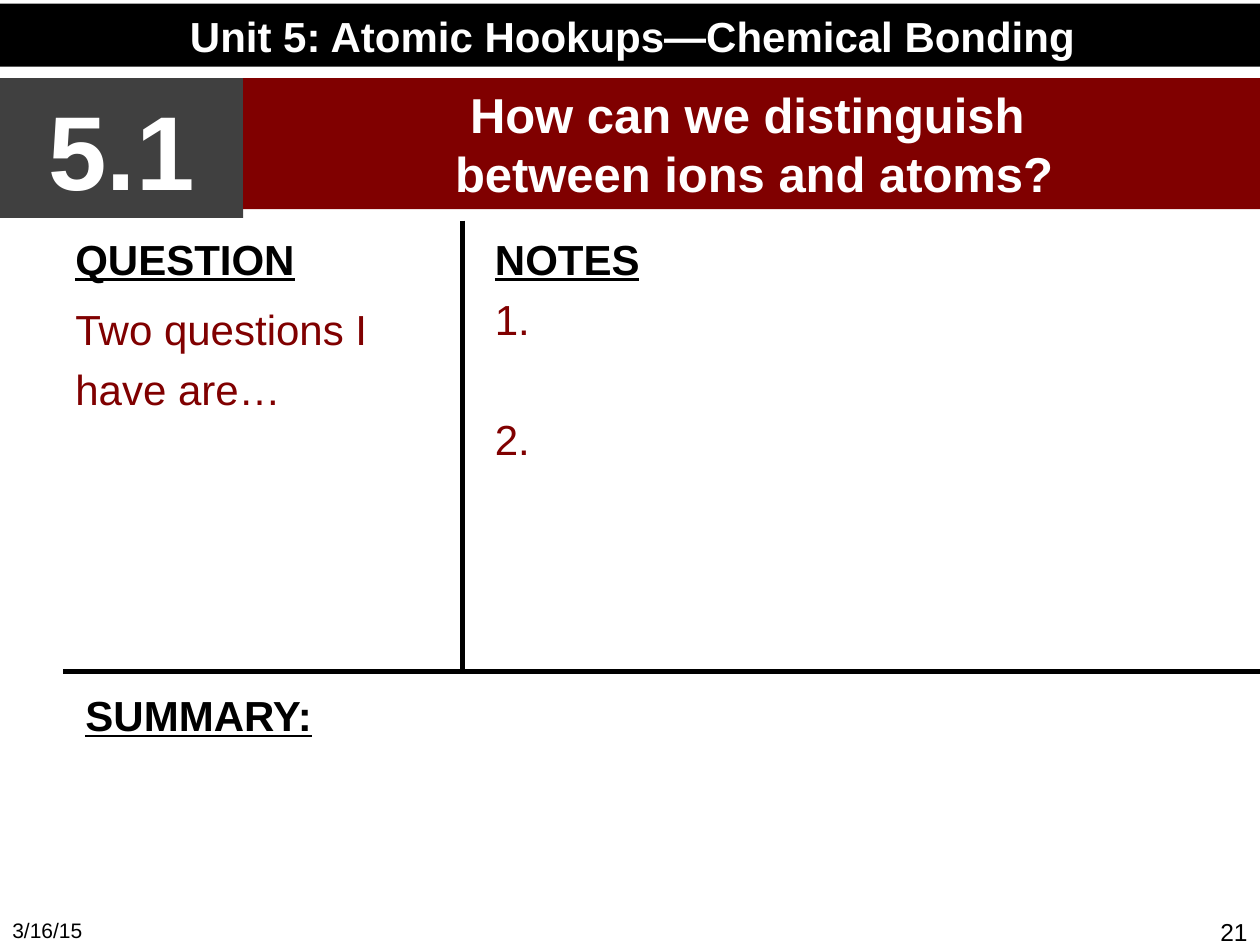
from dataclasses import dataclass

from lxml.etree import SubElement
from pptx import Presentation
from pptx.dml.color import RGBColor as RGB
from pptx.enum.shapes import MSO_CONNECTOR as CONN, MSO_SHAPE as SHAPE
from pptx.enum.text import MSO_ANCHOR as ANCHOR, PP_ALIGN as ALIGN
from pptx.oxml.ns import qn
from pptx.util import Inches, Pt


@dataclass(frozen=True)
class Theme:
    font: str = "Arial"
    black: RGB = RGB(0, 0, 0)
    white: RGB = RGB(255, 255, 255)
    gray: RGB = RGB(0x40, 0x40, 0x40)
    maroon: RGB = RGB(0x80, 0, 0)
    number: int = 60
    title: int = 28
    body: int = 24
    page: int = 14
    date: int = 12
    gap: float = 5.5
    rule: int = 3


T = Theme()


def style(p, size, color, bold=False, align=ALIGN.LEFT):
    p.alignment = align
    f = p.font
    f.name, f.size, f.bold = T.font, Pt(size), bold
    f.color.rgb = color


def add_banner(s, box, lines, fill, size):
    sp = s.shapes.add_shape(SHAPE.RECTANGLE, *map(Inches, box))
    sp.shadow.inherit = False
    sp.fill.solid()
    sp.fill.fore_color.rgb = fill
    sp.line.fill.background()
    tf = sp.text_frame
    tf.word_wrap = True
    tf.vertical_anchor = ANCHOR.MIDDLE
    for i, line in enumerate(lines):
        p = tf.add_paragraph() if i else tf.paragraphs[0]
        p.text = line
        style(p, size, T.white, True, ALIGN.CENTER)


def add_text_box(s, box):
    tf = s.shapes.add_textbox(*map(Inches, box)).text_frame
    tf.word_wrap = True
    return tf


def add_section(s, box, heading, entries=(), spacing=None):
    """Underlined heading, then (text, space before) entries."""
    tf = add_text_box(s, box)
    p = tf.paragraphs[0]
    p.text = heading
    style(p, T.body, T.black, True)
    p.font.underline = True
    for text, before in entries:
        p = tf.add_paragraph()
        p.text = text
        p.space_before = Pt(before)
        p.line_spacing = spacing
        style(p, T.body, T.maroon)


def add_rule(s, x1, y1, x2, y2):
    line = s.shapes.add_connector(CONN.STRAIGHT, *map(Inches, (x1, y1, x2, y2)))
    line.line.color.rgb = T.black
    line.line.width = Pt(T.rule)
    SubElement(line._element.spPr, qn("a:effectLst"))


def add_header(s, box):
    left, top, width, height = box
    split = 1.93
    add_banner(s, (left, top, width, 0.5),
               ["Unit 5: Atomic Hookups—Chemical Bonding"], T.black, T.body)
    row = top + 0.59
    add_banner(s, (left, row, split, height - 0.59), ["5.1"], T.gray, T.number)
    add_banner(s, (left + split, row, width - split, 1.04),
               ["How can we distinguish ", "between ions and atoms?"],
               T.maroon, T.title)


def add_notes_page(s, box):
    left, top, width, height = box
    right, column, floor = left + width, 3.67, 5.33
    # Dividers
    add_rule(s, column, top, column, floor)
    add_rule(s, right, floor, left, floor)
    # Question and notes columns
    add_section(s, (left, top + 0.05, column - left, 3.45), "QUESTION",
                [("Two questions I have are…", T.gap)], 1.2)
    notes = column + 0.16
    add_section(s, (notes, top + 0.05, right - notes, 3.45), "NOTES",
                [("1.", T.gap), ("2.", 40)])
    # Summary
    add_section(s, (left + 0.08, floor + 0.09, width - 0.08,
                    top + height - floor - 0.09), "SUMMARY:")


def add_footer(s, box):
    left, top, width, height = box
    cell = 2.33
    for x, text, size, align in (
            (left, "3/16/15", T.date, ALIGN.LEFT),
            (left + width - cell, "21", T.page, ALIGN.RIGHT)):
        p = add_text_box(s, (x, top, cell, height)).paragraphs[0]
        p.text = text
        style(p, size, T.black, align=align)


def main():
    prs = Presentation()
    prs.slide_width, prs.slide_height = Inches(10), Inches(7.5)
    s = prs.slides.add_slide(prs.slide_layouts[6])
    add_footer(s, (0, 7.23, 10, 0.27))
    add_header(s, (0, 0.03, 10.04, 1.7))
    add_notes_page(s, (0.5, 1.75, 9.5, 5.75))
    prs.save("out.pptx")


if __name__ == "__main__":
    main()
